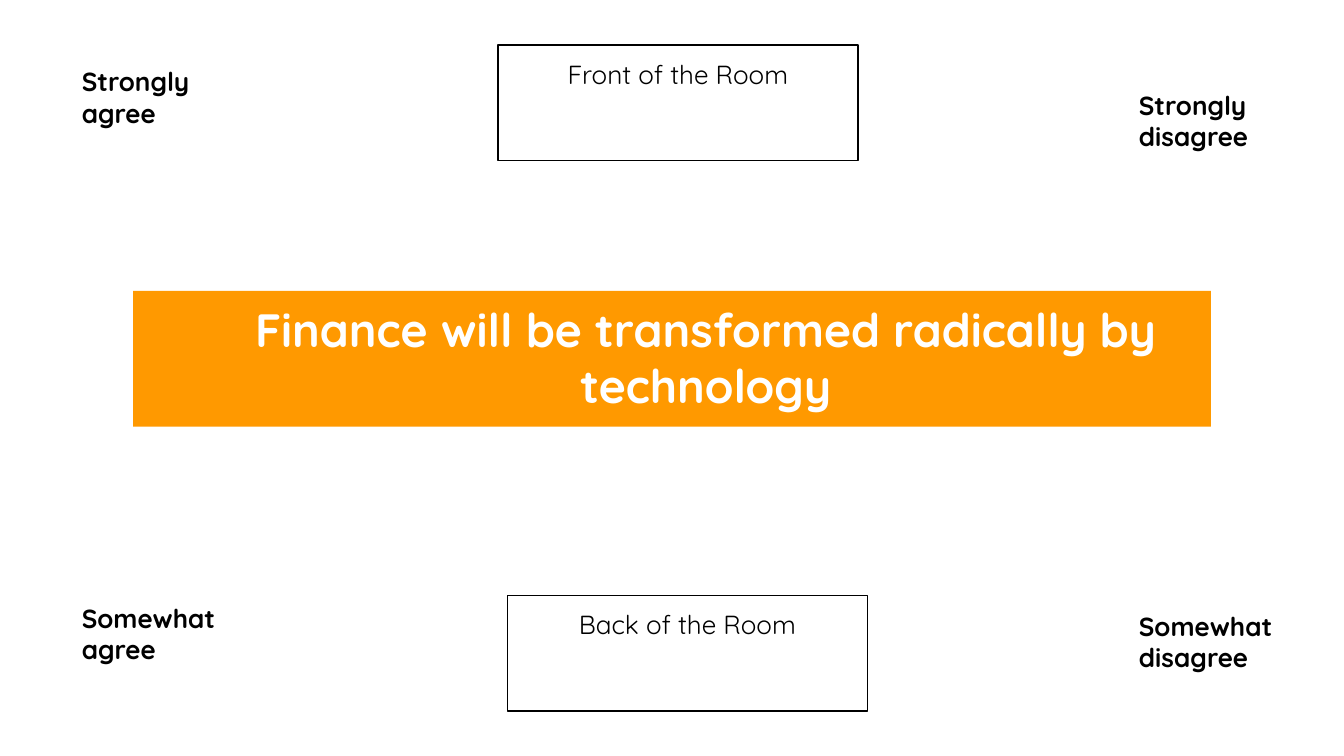
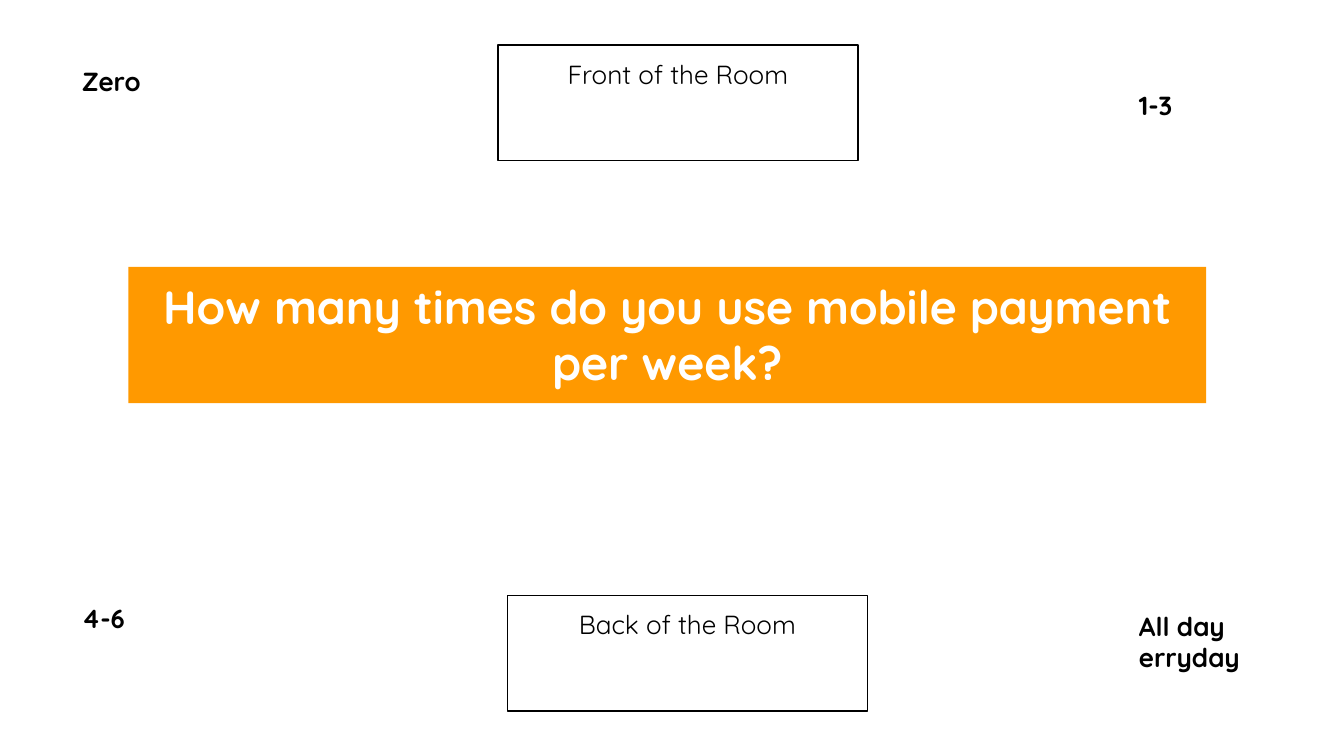
from collections import namedtuple
from dataclasses import dataclass

from pptx import Presentation
from pptx.dml.color import RGBColor
from pptx.enum.shapes import MSO_SHAPE
from pptx.enum.text import MSO_ANCHOR, MSO_AUTO_SIZE, PP_ALIGN
from pptx.util import Emu, Pt

RECT = MSO_SHAPE.RECTANGLE
TOP, BOTTOM = MSO_ANCHOR.TOP, MSO_ANCHOR.BOTTOM
LEFT, CENTER = PP_ALIGN.LEFT, PP_ALIGN.CENTER
NO_FIT = MSO_AUTO_SIZE.NONE
SCALE = 4572
TITLE_ONLY = 5

Box = namedtuple("Box", "x y w h")


@dataclass(frozen=True)
class Theme:
    font: str = "Quicksand"
    paper: RGBColor = RGBColor(0xFF, 0xFF, 0xFF)
    ink: RGBColor = RGBColor(0, 0, 0)
    accent: RGBColor = RGBColor(0xFF, 0x99, 0)
    body: Pt = Pt(14)
    title: Pt = Pt(25)
    line: Pt = Pt(0.75)


THEME = Theme()
PAGE = Box(0, 0, 2000, 1125)
INSET = 20
CORNERS = ((102, 78), (1675, 113), (102, 876), (1675, 888))
WALLS = (("Front of the Room", 741, 67), ("Back of the Room", 755, 886))
POLLS = (
    ("Finance will be transformed radically by technology",
     Box(198, 433, 1604, 202), 100,
     ("Strongly agree", "Strongly disagree",
      "Somewhat agree", "Somewhat disagree")),
    ("How many times do you use mobile payment per week?",
     Box(191, 397, 1604, 203), 0,
     ("Zero", "1-3", "4-6", "All day erryday")),
)


def px(n):
    return Emu(n * SCALE)


def inside(box, x, y, w, h):
    return Box(box.x + x, box.y + y, w, h)


def write(shape, text, size, color, bold=False, align=LEFT, anchor=TOP,
          indent=0):
    frame = shape.text_frame
    frame.word_wrap = True
    frame.auto_size = NO_FIT
    frame.vertical_anchor = anchor
    frame.margin_left = frame.margin_right = px(INSET)
    frame.margin_top = frame.margin_bottom = px(INSET)
    para = frame.paragraphs[0]
    para.alignment = align
    if indent:
        props = para._p.get_or_add_pPr()
        props.set("marL", str(px(indent)))
        props.set("indent", "0")
    run = para.add_run()
    run.text = text
    font = run.font
    font.name, font.size, font.bold = THEME.font, size, bold
    font.color.rgb = color


def add_label(slide, box, text):
    label = slide.shapes.add_textbox(*map(px, box))
    write(label, text, THEME.body, THEME.ink, bold=True)


def add_wall(slide, box, text):
    wall = slide.shapes.add_shape(RECT, *map(px, box))
    wall.shadow.inherit = False
    wall.fill.background()
    wall.line.color.rgb = THEME.ink
    wall.line.width = THEME.line
    write(wall, text, THEME.body, THEME.ink, align=CENTER)


def add_banner(slide, box, text, indent):
    title = slide.shapes.title
    title.left, title.top, title.width, title.height = map(px, box)
    title.fill.solid()
    title.fill.fore_color.rgb = THEME.accent
    write(title, text, THEME.title, THEME.paper, bold=True, align=CENTER,
          anchor=BOTTOM, indent=indent)


def add_poll(deck, page, claim, banner, indent, answers):
    slide = deck.slides.add_slide(deck.slide_layouts[TITLE_ONLY])
    slide.background.fill.solid()
    slide.background.fill.fore_color.rgb = THEME.paper
    add_banner(slide, inside(page, *banner), claim, indent)
    for (x, y), answer in zip(CORNERS, answers):
        add_label(slide, inside(page, x, y, 242, 172), answer)
    for name, x, y in WALLS:
        add_wall(slide, inside(page, x, y, 536, 172), name)


def main():
    deck = Presentation()
    deck.slide_width, deck.slide_height = px(PAGE.w), px(PAGE.h)
    for poll in POLLS:
        add_poll(deck, PAGE, *poll)
    deck.save("out.pptx")


if __name__ == "__main__":
    main()
